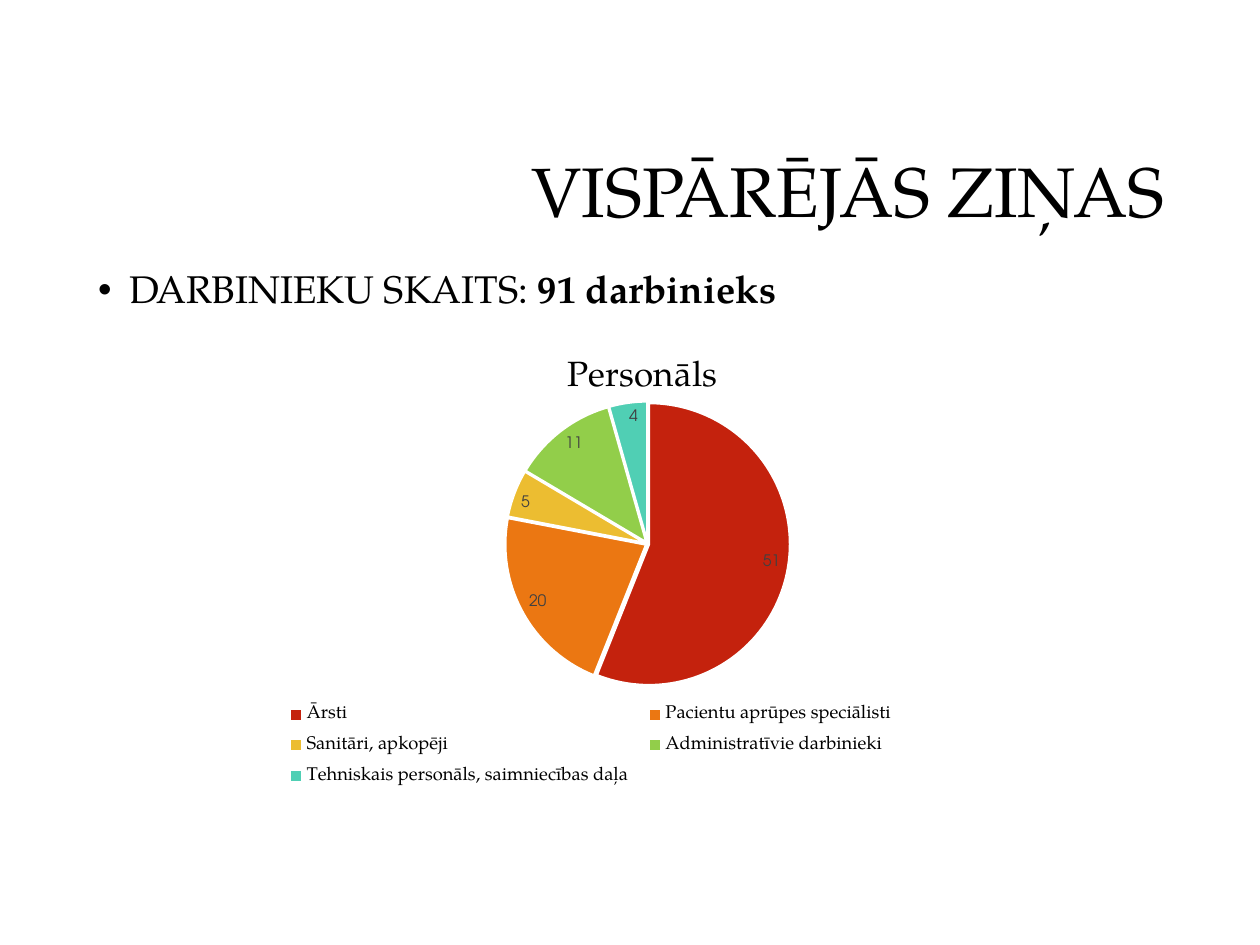
from lxml import etree
from pptx import Presentation
from pptx import util as u
from pptx.chart.data import CategoryChartData
from pptx.dml.color import RGBColor
from pptx.enum import chart as ch, text
from pptx.oxml import parse_xml
from pptx.oxml.ns import nsdecls, qn

W, H = 10, 7.5
SERIF, SANS = "TeX Gyre Pagella", "TeX Gyre Adventor"
STAFF = [
    ("Ārsti", 51, "C4220D"),
    ("Pacientu aprūpes speciālisti", 20, "EB7712"),
    ("Sanitāri, apkopēji", 5, "ECBD31"),
    ("Administratīvie darbinieki", 11, "92CE4A"),
    ("Tehniskais personāls, saimniecības daļa", 4, "50CFB4"),
]
PLOT_AREA = (2.9, 13.7, 95.4, 57.6)
LEGEND_AREA = (6.3, 72.7, 75.1, 21)


def color(hex_code):
    return RGBColor.from_string(hex_code)


def box(x, y, w, h):
    return [u.Inches(n / 100) for n in (x * W, y * H, w * W, h * H)]


def style(font, size, name=SERIF, hex_code="000000", bold=False):
    font.size, font.name, font.bold = u.Pt(size), name, bold
    font.color.rgb = color(hex_code)


def add_text(s, area, runs, size, anchor, align, bullet=False):
    tf = s.shapes.add_textbox(*box(*area)).text_frame
    tf.word_wrap, tf.vertical_anchor = True, anchor
    p = tf.paragraphs[0]
    p.alignment, p.line_spacing = align, 0.9
    if bullet:
        pPr = p._p.get_or_add_pPr()
        pPr.set("marL", str(u.Inches(0.25)))
        pPr.set("indent", str(u.Inches(-0.25)))
        etree.SubElement(pPr, qn("a:buFont"), typeface="Arial")
        etree.SubElement(pPr, qn("a:buChar"), char="•")
    for words, bold in runs:
        r = p.add_run()
        r.text = words
        style(r.font, size, bold=bold)


def set_layout(part, area, before, target=""):
    for old in part.findall(qn("c:layout")):
        part.remove(old)
    modes = '<c:xMode val="edge"/><c:yMode val="edge"/>'
    sizes = "".join(f'<c:{k} val="{n / 100:.3f}"/>' for k, n in zip("xywh", area))
    part.find(qn(before)).addprevious(parse_xml(
        f'<c:layout {nsdecls("c")}><c:manualLayout>{target}{modes}{sizes}'
        '</c:manualLayout></c:layout>'))


def add_pie(s, area, title):
    data = CategoryChartData()
    data.categories = [name for name, _, _ in STAFF]
    data.add_series("Series 1", [count for _, count, _ in STAFF])
    chart = s.shapes.add_chart(ch.XL_CHART_TYPE.PIE, *box(*area), data).chart
    style(chart.font, 10, SANS)
    chart.has_title = True
    r = chart.chart_title.text_frame.paragraphs[0].add_run()
    r.text = title
    style(r.font, 20)
    chart.has_legend = True
    chart.legend.position = ch.XL_LEGEND_POSITION.BOTTOM
    chart.legend.include_in_layout = False
    style(chart.legend.font, 10.5)
    set_layout(chart._chartSpace.chart.plotArea, PLOT_AREA, "c:pieChart",
               '<c:layoutTarget val="inner"/>')
    set_layout(chart.legend._element, LEGEND_AREA, "c:overlay")

    plot = chart.plots[0]
    plot.vary_by_categories = True
    series = plot.series[0]
    series._element.find(qn("c:cat")).addprevious(
        parse_xml(f'<c:explosion {nsdecls("c")} val="1"/>'))
    for i, (_, _, hex_code) in enumerate(STAFF):
        fmt = series.points[i].format
        fmt.fill.solid()
        fmt.fill.fore_color.rgb = color(hex_code)
        fmt.line.color.rgb = color("FFFFFF")
        fmt.line.width = u.Pt(1.5)
    labels = series.data_labels
    labels.show_value = True
    labels.position = ch.XL_LABEL_POSITION.INSIDE_END
    style(labels.font, 9, SANS, "404040")


def main():
    prs = Presentation()
    prs.slide_width, prs.slide_height = u.Inches(W), u.Inches(H)
    s = prs.slides.add_slide(prs.slide_layouts[6])
    add_text(s, (23.8, 11.2, 69.6, 18.8), [("VISPĀRĒJĀS ZIŅAS", False)], 40,
             text.MSO_ANCHOR.MIDDLE, text.PP_ALIGN.RIGHT)
    add_text(s, (6.8, 28, 87, 64.4),
             [("DARBINIEKU SKAITS: ", False), ("91 darbinieks", True)], 22,
             text.MSO_ANCHOR.TOP, text.PP_ALIGN.LEFT, bullet=True)
    add_pie(s, (17.7, 35.3, 66.6, 52.4), "Personāls")
    prs.save("out.pptx")


if __name__ == "__main__":
    main()
